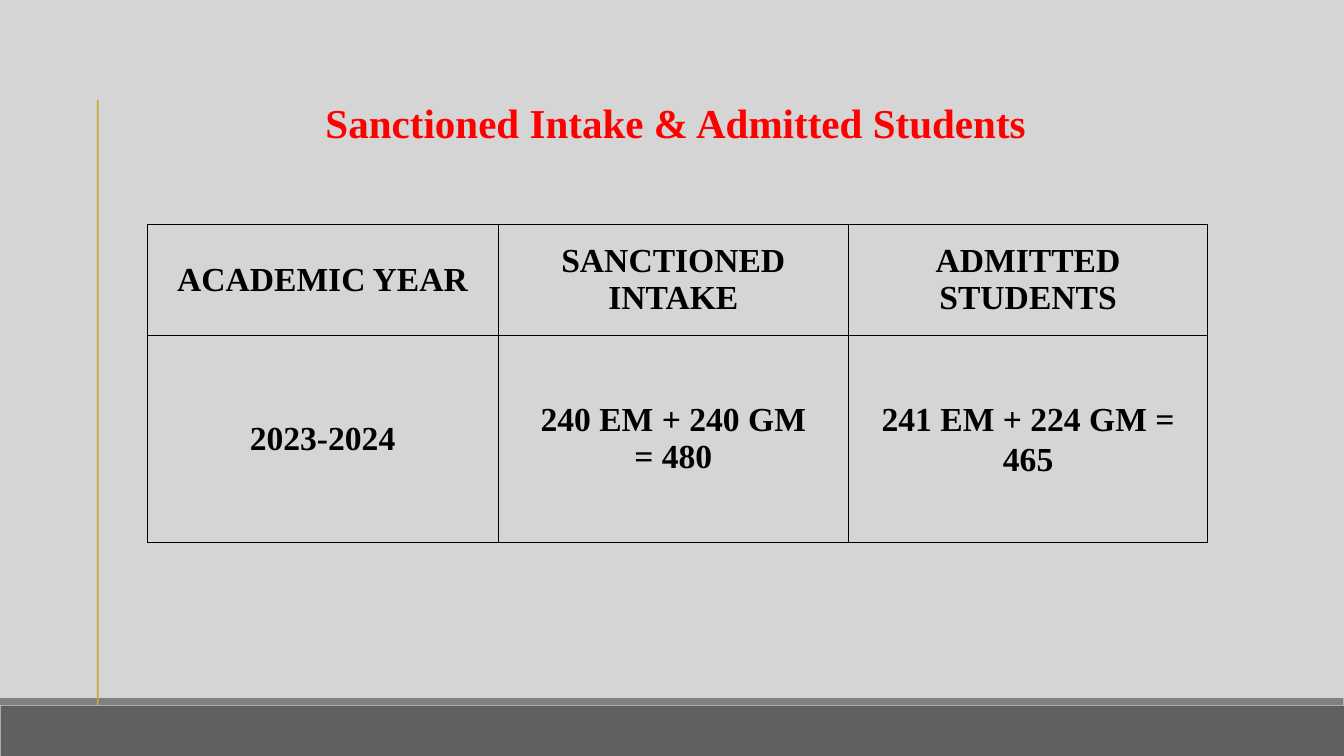
from lxml import etree
from pptx import Presentation
from pptx.dml.color import RGBColor
from pptx.enum.shapes import MSO_SHAPE
from pptx.enum.text import MSO_ANCHOR, MSO_AUTO_SIZE, PP_ALIGN
from pptx.oxml.ns import qn
from pptx.util import Inches, Pt

RECT = MSO_SHAPE.RECTANGLE
MIDDLE = MSO_ANCHOR.MIDDLE
CENTER = PP_ALIGN.CENTER
FIT_SHAPE = MSO_AUTO_SIZE.SHAPE_TO_FIT_TEXT
BACKGROUND = RGBColor(0xD5, 0xD5, 0xD5)
DARK_GRAY = RGBColor(0x60, 0x60, 0x60)
GRAY = RGBColor(0x80, 0x80, 0x80)
GOLD = RGBColor(0xCD, 0xA6, 0x3C)
RED = RGBColor(0xFF, 0x00, 0x00)
BLACK = RGBColor(0x00, 0x00, 0x00)
FONT = "Times New Roman"

BARS = [
    (0.01, 10.5, 19.99, 0.75, DARK_GRAY),
    (0, 10.39, 19.99, 0.1, GRAY),
    (1.44, 1.49, 0.03, 9, GOLD),
]
COLUMN_WIDTHS = [5.22, 5.22, 5.34]
ROW_HEIGHTS = [1.65, 3.08]
ROWS = [
    ["ACADEMIC YEAR", "SANCTIONED INTAKE", "ADMITTED STUDENTS"],
    ["2023-2024", "240 EM + 240 GM\n= 480", "241 EM + 224 GM = 465"],
]


def format_text(tf, size, color):
    """Centre the paragraphs and set their bold font."""
    for p in tf.paragraphs:
        p.alignment = CENTER
        for r in p.runs:
            r.font.name = FONT
            r.font.size = Pt(size)
            r.font.bold = True
            r.font.color.rgb = color


def add_bar(slide, left, top, width, height, color):
    """Add a plain filled rectangle."""
    sp = slide.shapes.add_shape(
        RECT, Inches(left), Inches(top), Inches(width), Inches(height))
    sp.shadow.inherit = False
    sp.fill.solid()
    sp.fill.fore_color.rgb = color
    sp.line.fill.background()


def set_title(slide, text):
    """Place and format the title placeholder."""
    title = slide.shapes.title
    title.left, title.top = Inches(2.17), Inches(1.4)
    title.width, title.height = Inches(15.78), Inches(0.84)
    tf = title.text_frame
    tf.text = text
    tf.word_wrap = True
    tf.auto_size = FIT_SHAPE
    tf.vertical_anchor = MIDDLE
    format_text(tf, 44, RED)


def set_borders(cell, color, width):
    """Draw a solid line on all four sides of a cell."""
    tc_pr = cell._tc.get_or_add_tcPr()
    for side in ("a:lnL", "a:lnR", "a:lnT", "a:lnB"):
        ln = etree.SubElement(tc_pr, qn(side), w=str(Pt(width)))
        fill = etree.SubElement(ln, qn("a:solidFill"))
        etree.SubElement(fill, qn("a:srgbClr"), val=str(color))


def add_intake_table(slide):
    """Add the bordered table of sanctioned and admitted numbers."""
    table = slide.shapes.add_table(
        len(ROWS), len(COLUMN_WIDTHS), Inches(2.19), Inches(3.34),
        Inches(sum(COLUMN_WIDTHS)), Inches(sum(ROW_HEIGHTS))).table
    table.horz_banding = False
    for column, width in zip(table.columns, COLUMN_WIDTHS):
        column.width = Inches(width)
    for row, height, texts in zip(table.rows, ROW_HEIGHTS, ROWS):
        row.height = Inches(height)
        for cell, text in zip(row.cells, texts):
            cell.text_frame.text = text
            cell.vertical_anchor = MIDDLE
            set_borders(cell, BLACK, 1)
            cell.fill.background()
            format_text(cell.text_frame, 36, BLACK)
    p = table.cell(1, 2).text_frame.paragraphs[0]
    p.line_spacing = 1.07
    p.space_after = Pt(8)


def main():
    """Build the slide and save it."""
    prs = Presentation()
    prs.slide_width, prs.slide_height = Inches(20), Inches(11.25)
    slide = prs.slides.add_slide(prs.slide_layouts[5])
    slide.background.fill.solid()
    slide.background.fill.fore_color.rgb = BACKGROUND
    for bar in BARS:
        add_bar(slide, *bar)
    set_title(slide, "Sanctioned Intake & Admitted Students")
    add_intake_table(slide)
    prs.save("out.pptx")


if __name__ == "__main__":
    main()
